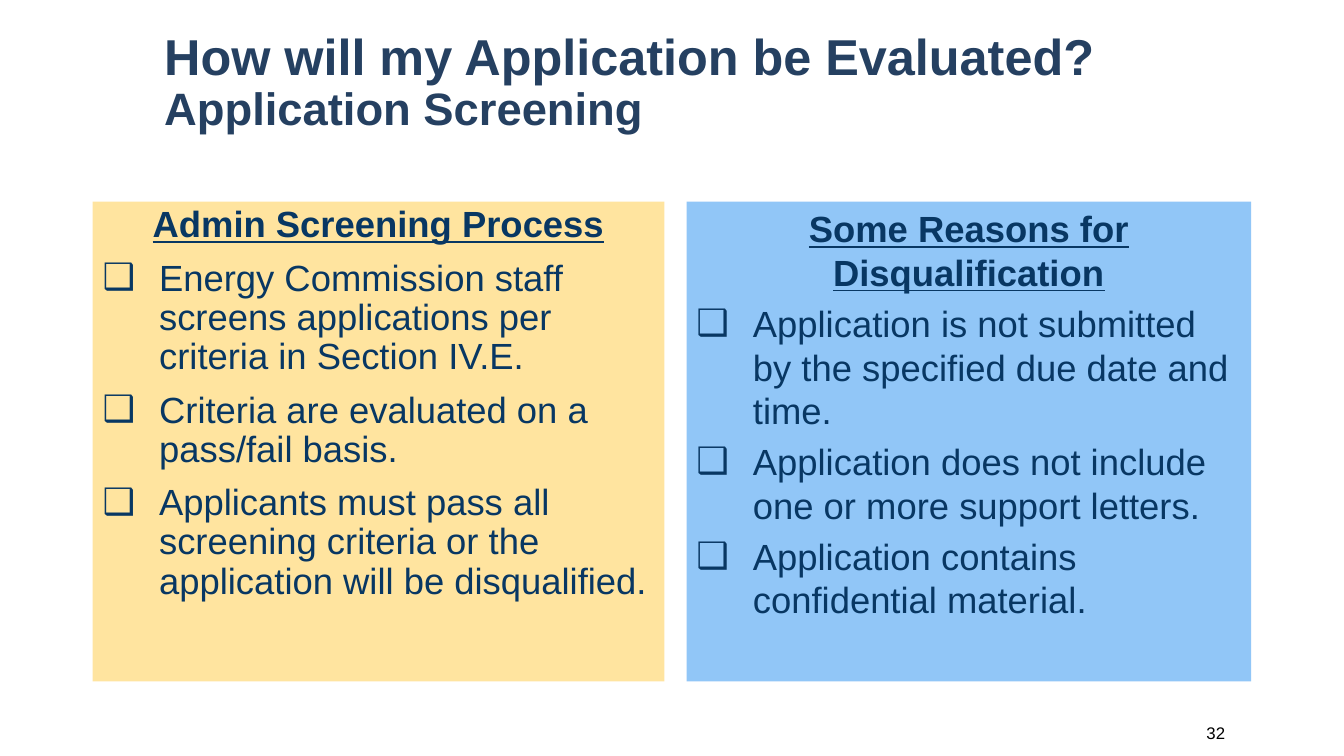
from lxml.etree import SubElement
from pptx import Presentation
from pptx.dml.color import RGBColor
from pptx.enum.shapes import MSO_SHAPE
from pptx.enum.text import MSO_ANCHOR, PP_ALIGN
from pptx.oxml.ns import qn
from pptx.util import Inches, Pt

HUES = {"title": "254061", "text": "083763", "left": "FFE49F", "right": "91C6F7", "page": "000000"}
HEAD = {"size": Pt(26), "bold": True, "underline": True}
ITEM = {"size": Pt(26), "bold": False, "underline": False}
LEFT = ["Admin Screening Process",
        "Energy Commission staff screens applications per criteria in Section IV.E.",
        "Criteria are evaluated on a pass/fail basis.",
        "Applicants must pass all screening criteria or the application will be disqualified."]
RIGHT = ["Some Reasons for Disqualification",
         "Application is not submitted by the specified due date and time.",
         "Application does not include one or more support letters.",
         "Application contains confidential material."]


def style(part, hue, form):
    """Apply a colour and a dict of format values to the font of a part."""
    part.font.name = "Arial"
    part.font.color.rgb = RGBColor.from_string(HUES[hue])
    for key, value in form.items():
        setattr(part.font, key, value)


def bullet(para):
    """Give a paragraph a box bullet with a hanging indent."""
    props = para._p.get_or_add_pPr()
    props.set("marL", str(Inches(0.56)))
    props.set("indent", str(-Inches(0.56)))
    SubElement(props, qn("a:buFont"), typeface="Arial")
    SubElement(props, qn("a:buChar"), char="❑")


def label(slide, box, lines, hue, align):
    """Place a box of text whose lines are pairs of wording and size."""
    frame = slide.shapes.add_textbox(*map(Inches, box)).text_frame
    frame.word_wrap = True
    frame.vertical_anchor = MSO_ANCHOR.MIDDLE
    para = frame.paragraphs[0]
    para.alignment = align
    para.line_spacing = 0.9 if len(lines) > 1 else 1.0
    for row, (words, size) in enumerate(lines):
        if row:
            para.add_line_break()
        run = para.add_run()
        run.text = words
        style(run, hue, {"size": Pt(size), "bold": len(lines) > 1})


def panel(slide, box, hue, lines, pitch, gap):
    """Draw a filled panel with a heading above bulleted items."""
    shape = slide.shapes.add_shape(MSO_SHAPE.RECTANGLE, *map(Inches, box))
    shape.shadow.inherit = False
    shape.fill.solid()
    shape.fill.fore_color.rgb = RGBColor.from_string(HUES[hue])
    shape.line.fill.background()
    frame = shape.text_frame
    frame.word_wrap = True
    frame.vertical_anchor = MSO_ANCHOR.TOP
    for row, words in enumerate(lines):
        para = frame.add_paragraph() if row else frame.paragraphs[0]
        para.alignment = PP_ALIGN.LEFT if row else PP_ALIGN.CENTER
        para.line_spacing = pitch
        if row:
            para.space_before = Pt(gap)
            bullet(para)
        run = para.add_run()
        run.text = words
        style(run, "text", ITEM if row else HEAD)


def main():
    """Build the slide and save it."""
    deck = Presentation()
    deck.slide_width, deck.slide_height = Inches(13.33), Inches(7.5)
    slide = deck.slides.add_slide(deck.slide_layouts[6])
    title = [("How will my Application be Evaluated?", 36), ("Application Screening", 32.4)]
    label(slide, (1.53, 0.26, 10.89, 1.14), title, "title", PP_ALIGN.LEFT)
    panel(slide, (0.92, 2, 5.67, 4.76), "left", LEFT, 0.9, 10)
    panel(slide, (6.81, 2, 5.6, 4.76), "right", RIGHT, 1.0, 5.2)
    label(slide, (10.32, 7.07, 1.93, 0.4), [("32", 12)], "page", PP_ALIGN.RIGHT)
    deck.save("out.pptx")


if __name__ == "__main__":
    main()
